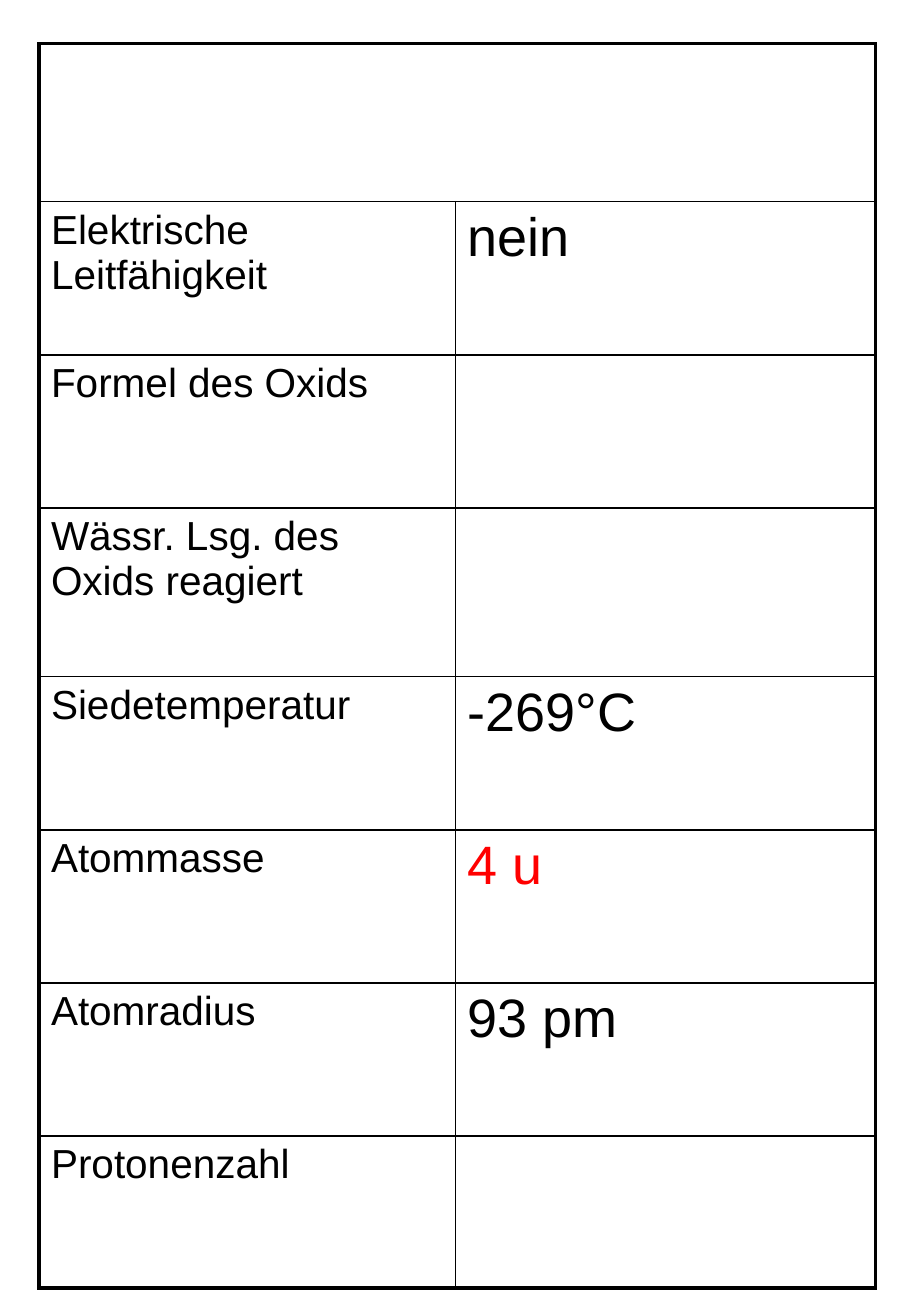
import pptx
import pptx.util
import pptx.dml.color
import pptx.oxml.ns
import lxml.etree

inch = pptx.util.Inches
qn = pptx.oxml.ns.qn
tint = {"ink": "000000", "mark": "FF0000"}
thin, thick = 1, 2.25
cols = [3.43, 3.46]
rows = [1.3, 1.26, 1.26, 1.39, 1.26, 1.26, 1.26, 1.25]
facts = [
    ("", ""),
    ("Elektrische Leitfähigkeit", "nein"),
    ("Formel des Oxids", ""),
    ("Wässr. Lsg. des Oxids reagiert", ""),
    ("Siedetemperatur", "-269°C"),
    ("Atommasse", "4 u"),
    ("Atomradius", "93 pm"),
    ("Protonenzahl", ""),
]
sizes = [24, 32]
last = len(facts) - 1


def edge(cell, side, width):
    props = cell._tc.get_or_add_tcPr()
    line = lxml.etree.SubElement(props, qn("a:ln" + side), w=str(pptx.util.Pt(width)))
    fill = lxml.etree.SubElement(line, qn("a:solidFill"))
    lxml.etree.SubElement(fill, qn("a:srgbClr"), val=tint["ink"])


def write(cell, text, size, hue):
    para = cell.text_frame.paragraphs[0]
    space = lxml.etree.SubElement(para._p.get_or_add_pPr(), qn("a:spcBef"))
    lxml.etree.SubElement(space, qn("a:spcPct"), val="20000")
    run = para.add_run()
    run.text = text
    style = {"name": "Arial", "size": pptx.util.Pt(size), "bold": False}
    for key, value in style.items():
        setattr(run.font, key, value)
    run.font.color.rgb = pptx.dml.color.RGBColor.from_string(tint[hue])


deck = pptx.Presentation()
deck.slide_width, deck.slide_height = inch(7.5), inch(10.83)
slide = deck.slides.add_slide(deck.slide_layouts[6])

frame = slide.shapes.add_table(
    len(rows), len(cols), inch(0.32), inch(0.36), inch(sum(cols)), inch(sum(rows))
)
table = frame.table
for key in ("first_row", "horz_banding"):
    setattr(table, key, False)
for col, width in zip(table.columns, cols):
    col.width = inch(width)
for row, height in zip(table.rows, rows):
    row.height = inch(height)
table.cell(0, 0).merge(table.cell(0, 1))

for r, pair in enumerate(facts):
    for c, text in enumerate(pair):
        cell = table.cell(r, c)
        outer = {
            "L": c == 0,
            "R": c == 1 or r == 0,
            "T": r == 0,
            "B": r == last,
        }
        for side, rim in outer.items():
            edge(cell, side, thick if rim else thin)
        cell.fill.background()
        if text:
            write(cell, text, sizes[c], "mark" if text == "4 u" else "ink")

deck.save("out.pptx")
